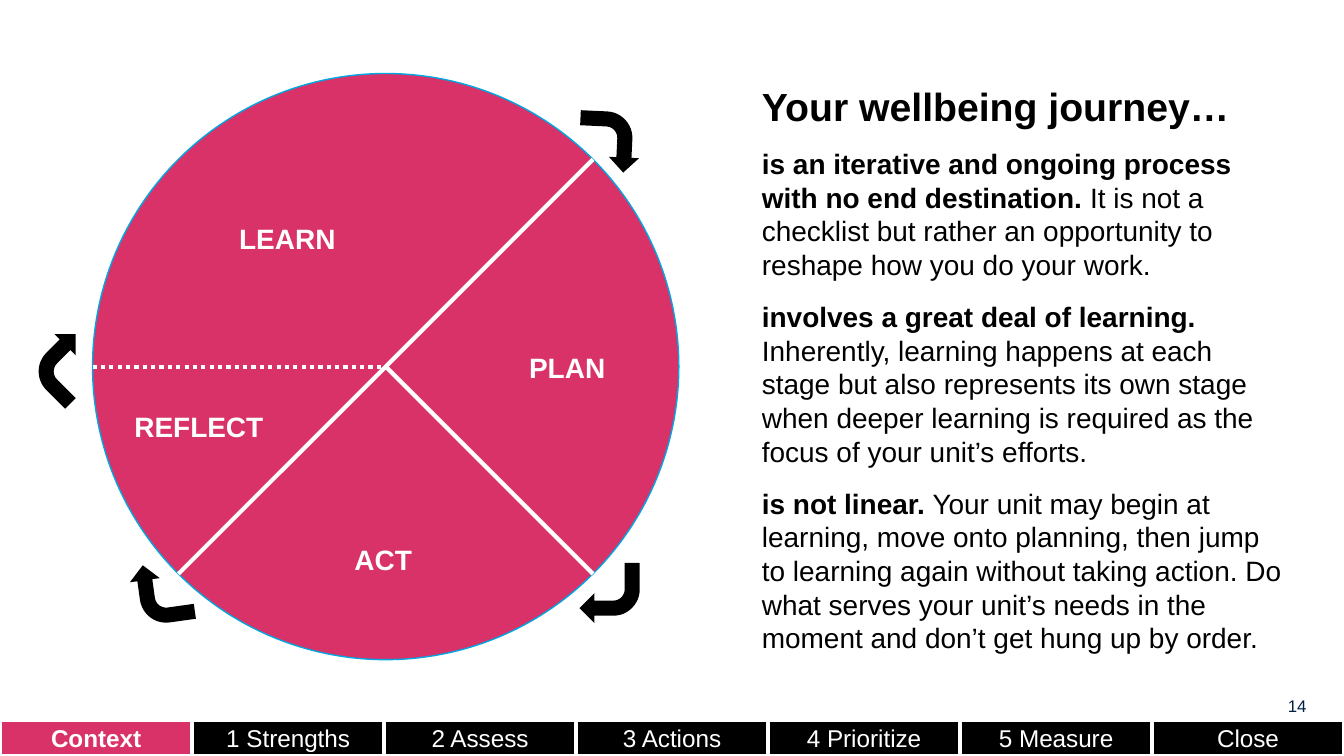
from math import cos, pi

from lxml.etree import SubElement
from pptx import Presentation
from pptx.dml.color import RGBColor
from pptx.enum.dml import MSO_LINE
from pptx.enum.shapes import MSO_CONNECTOR, MSO_SHAPE
from pptx.enum.text import MSO_ANCHOR, PP_ALIGN
from pptx.oxml.ns import qn
from pptx.util import Cm, Pt

PINK, BLACK, WHITE, BLUE, NAVY = "D93268", "000000", "FFFFFF", "00A7E1", "002145"
WIDTH, HEIGHT = 25.4, 14.29
CX, CY, RADIUS = 7.29, 6.93, 5.54
TABS = ["Context", "1 Strengths", "2 Assess", "3 Actions", "4 Prioritize", "5 Measure", "Close"]
STAGES = [("LEARN", 4.27, 3.94, 2.4), ("PLAN", 9.75, 6.38, 2.4),
          ("ACT", 6.45, 10.01, 2.4), ("REFLECT", 2.29, 7.49, 3.15)]
ARROWS = [(10.95, 2.11, 92.7), (10.95, 10.64, 180), (2.49, 10.64, 262.1), (0.66, 6.35, 315)]
POINTS = [
    ("is an iterative and ongoing process with no end destination. ",
     "It is not a checklist but rather an opportunity to reshape how you do your work."),
    ("involves a great deal of learning. ",
     "Inherently, learning happens at each stage but also represents its own stage when deeper "
     "learning is required as the focus of your unit’s efforts."),
    ("is not linear.",
     " Your unit may begin at learning, move onto planning, then jump to learning again without "
     "taking action. Do what serves your unit’s needs in the moment and don’t get hung up by order."),
]


def rgb(color):
    """Turn a hex string into a colour."""
    return RGBColor.from_string(color)


def add_run(p, text, size, color, bold=False):
    """Add a formatted run to a paragraph."""
    r = p.add_run()
    r.text = text
    r.font.name, r.font.size, r.font.bold = "Arial", Pt(size), bold
    r.font.color.rgb = rgb(color)


def set_frame(tf, anchor=MSO_ANCHOR.MIDDLE, inset=0.25):
    """Set wrapping, anchor and insets, and return the first paragraph."""
    tf.word_wrap, tf.vertical_anchor = True, anchor
    tf.margin_left = tf.margin_right = tf.margin_top = tf.margin_bottom = Cm(inset)
    return tf.paragraphs[0]


def add_shape(s, kind, x, y, w, h, fill, line=None, width=0.75):
    """Add a flat filled shape, outlined if a line colour is given."""
    sp = s.shapes.add_shape(kind, Cm(x), Cm(y), Cm(w), Cm(h))
    sp.shadow.inherit = False
    sp.fill.solid()
    sp.fill.fore_color.rgb = rgb(fill)
    if line:
        sp.line.color.rgb = rgb(line)
        sp.line.width = Pt(width)
    else:
        sp.line.fill.background()
    return sp


def add_text(s, x, y, w, h, anchor=MSO_ANCHOR.TOP, inset=0.25):
    """Add a text box and return its text frame."""
    tf = s.shapes.add_textbox(Cm(x), Cm(y), Cm(w), Cm(h)).text_frame
    set_frame(tf, anchor, inset)
    return tf


def add_divider(s, x1, y1, x2, y2, dash=None):
    """Add a white line between two points."""
    c = s.shapes.add_connector(MSO_CONNECTOR.STRAIGHT, Cm(x1), Cm(y1), Cm(x2), Cm(y2))
    c.line.color.rgb = rgb(WHITE)
    c.line.width = Pt(2.25)
    if dash:
        c.line.dash_style = dash
    SubElement(c._element.spPr, qn("a:effectLst"))


def add_tabs(s):
    """Add the navigation bar with its first tab active."""
    w = WIDTH / len(TABS)
    for i, name in enumerate(TABS):
        active = i == 0
        sp = add_shape(s, MSO_SHAPE.RECTANGLE, i * w, 13.61, w, 0.68,
                       PINK if active else BLACK, WHITE, 2.25)
        p = set_frame(sp.text_frame)
        p.alignment = PP_ALIGN.CENTER
        add_run(p, name, 13, WHITE, active)


def add_wheel(s):
    """Add the circle with its stages, dividers and arrows."""
    add_shape(s, MSO_SHAPE.OVAL, CX - RADIUS, CY - RADIUS, 2 * RADIUS, 2 * RADIUS, PINK, BLUE)
    for name, x, y, w in STAGES:
        tf = add_text(s, x, y, w, 1.14)
        add_run(tf.paragraphs[0], name, 15, WHITE, True)
    d = RADIUS * cos(pi / 4)
    add_divider(s, CX + d, CY - d, CX - d, CY + d)
    add_divider(s, CX + d, CY + d, CX, CY)
    add_divider(s, CX - RADIUS, CY, CX, CY, MSO_LINE.ROUND_DOT)
    for x, y, angle in ARROWS:
        add_shape(s, MSO_SHAPE.BENT_ARROW, x, y, 1.14, 1.14, BLACK).rotation = angle


def add_journey(s):
    """Fill the title and add the paragraphs below it."""
    title = s.shapes.title
    title.left, title.top, title.width, title.height = Cm(14.15), Cm(1.4), Cm(10.34), Cm(1.2)
    p = set_frame(title.text_frame)
    p.alignment = PP_ALIGN.LEFT
    add_run(p, "Your wellbeing journey…", 21, BLACK, True)
    tf = add_text(s, 14.15, 2.67, 10.34, 9.8, MSO_ANCHOR.MIDDLE)
    for i, (lead, rest) in enumerate(POINTS):
        p = tf.add_paragraph() if i else tf.paragraphs[0]
        if i:
            p.space_before = Pt(10)
        add_run(p, lead, 15, BLACK, True)
        add_run(p, rest, 15, BLACK)


def main():
    """Build the slide and save it."""
    prs = Presentation()
    prs.slide_width, prs.slide_height = Cm(WIDTH), Cm(HEIGHT)
    s = prs.slides.add_slide(prs.slide_layouts[5])
    p = add_text(s, 23.85, 13.16, 0.84, 0.53, inset=0).paragraphs[0]
    p.alignment = PP_ALIGN.RIGHT
    add_run(p, "14", 9, NAVY)
    add_tabs(s)
    add_wheel(s)
    add_journey(s)
    prs.save("out.pptx")


if __name__ == "__main__":
    main()
